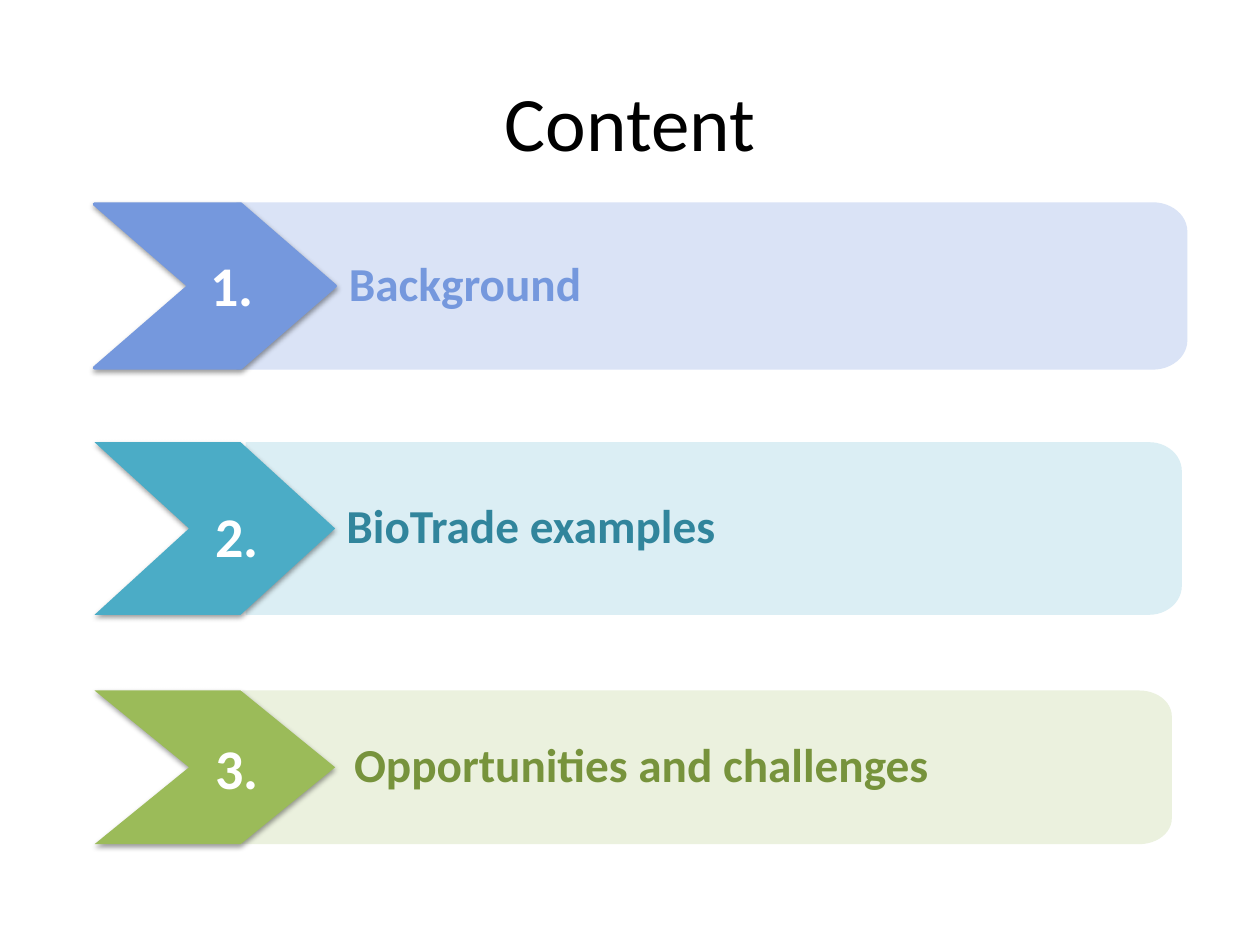
"""Build the Content slide: three numbered chevron banners."""
from dataclasses import dataclass
from math import cos, pi, sin
from typing import Any

from lxml.etree import SubElement
from pptx import Presentation
from pptx.dml.color import RGBColor as Rgb
from pptx.enum.shapes import MSO_SHAPE as Preset
from pptx.enum.text import MSO_ANCHOR as Anchor, PP_ALIGN as Align
from pptx.oxml.ns import qn
from pptx.util import Inches, Pt


@dataclass(frozen=True)
class Theme:
    """Colours, font and type sizes of the slide."""
    font: str = "Calibri"
    title: str = "000000"
    number: str = "FFFFFF"
    shadow: str = "000000"
    title_size: int = 44
    topic_size: int = 27
    number_size: int = 32


@dataclass(frozen=True)
class Banner:
    """One agenda entry; lengths are in inches."""
    number: str
    topic: str
    top: float
    height: float
    left: float
    right: float
    indent: float
    number_at: tuple[float, float, float]
    strong: str
    pale: str
    ink: str
    outlined: bool = False


THEME = Theme()
CHEVRON_LEFT, CHEVRON_WIDTH, CHEVRON_POINT = 0.75, 1.91, 0.75
CORNER_WIDTH, CORNER_SHARE, CORNER_STEPS = 0.26, 0.167, 12
BANNERS = (
    Banner("1.", "Background", 1.62, 1.3, 1.88, 9.41, 0.68,
           (1.57, 1.94, 0.64), "7598DD", "DAE3F6", "7598DD", True),
    Banner("2.", "BioTrade examples", 3.51, 1.37, 1.95, 9.38, 0.59,
           (1.61, 3.93, 0.71), "4BACC6", "DBEEF4", "31859C"),
    Banner("3.", "Opportunities and challenges", 5.48, 1.22, 1.92, 9.3, 0.68,
           (1.61, 5.77, 0.63), "9BBB59", "EBF1DE", "77933C"),
)


def apply(target: Any, **values: Any) -> None:
    """Set each named attribute on the target."""
    for name, value in values.items():
        setattr(target, name, value)


def write(frame: Any, wording: str, size: int, colour: str, bold: bool,
          align: Any = Align.LEFT) -> Any:
    """Put one formatted paragraph in a text frame and return it."""
    frame.word_wrap = True
    paragraph = frame.paragraphs[0]
    paragraph.alignment = align
    run = paragraph.add_run()
    run.text = wording
    apply(run.font, name=THEME.font, size=Pt(size), bold=bold)
    run.font.color.rgb = Rgb.from_string(colour)
    return paragraph


def paint(shape: Any, colour: str, outlined: bool) -> None:
    """Give a shape a plain fill, with an outline to match if wanted."""
    shape.shadow.inherit = False
    shape.fill.solid()
    shape.fill.fore_color.rgb = Rgb.from_string(colour)
    if outlined:
        shape.line.color.rgb = Rgb.from_string(colour)
        shape.line.width = Pt(2)
    else:
        shape.line.fill.background()


def cast_shadow(shape: Any) -> None:
    """Add a soft shadow below a shape."""
    effects = shape._element.spPr.find(qn("a:effectLst"))
    shadow = SubElement(effects, qn("a:outerShdw"), blurRad=str(Pt(3.1)),
                        dist=str(Pt(1.6)), dir="5400000", rotWithShape="0")
    colour = SubElement(shadow, qn("a:srgbClr"), val=THEME.shadow)
    SubElement(colour, qn("a:alpha"), val="38000")


def draw_panel(shapes: Any, banner: Banner) -> None:
    """Draw the pale panel, rounded at the right, with its topic."""
    bottom = banner.top + banner.height
    corner_height = banner.height * CORNER_SHARE
    angles = [step * pi / 2 / CORNER_STEPS for step in range(CORNER_STEPS + 1)]
    arc = [(banner.right - CORNER_WIDTH * (1 - sin(angle)),
            corner_height * (1 - cos(angle))) for angle in angles]
    outline = [(x, banner.top + drop) for x, drop in arc]
    outline += [(x, bottom - drop) for x, drop in reversed(arc)]
    outline.append((banner.left, bottom))
    builder = shapes.build_freeform(Inches(banner.left), Inches(banner.top))
    builder.add_line_segments([(Inches(x), Inches(y)) for x, y in outline])
    panel = builder.convert_to_shape()
    paint(panel, banner.pale, banner.outlined)
    frame = panel.text_frame
    apply(frame, vertical_anchor=Anchor.MIDDLE, margin_left=Inches(0.21),
          margin_right=Inches(0.09), margin_top=Inches(0.09),
          margin_bottom=Inches(0.09))
    topic = write(frame, banner.topic, THEME.topic_size, banner.ink, True)
    apply(topic, level=1, line_spacing=0.9)
    properties = topic._p.get_or_add_pPr()
    properties.set("marL", str(Inches(banner.indent)))
    properties.set("indent", "0")


def draw_chevron(shapes: Any, banner: Banner) -> None:
    """Draw the strong chevron and the number over it."""
    chevron = shapes.add_shape(
        Preset.CHEVRON, Inches(CHEVRON_LEFT), Inches(banner.top),
        Inches(CHEVRON_WIDTH), Inches(banner.height))
    chevron.adjustments[0] = CHEVRON_POINT / banner.height
    paint(chevron, banner.strong, banner.outlined)
    cast_shadow(chevron)
    left, top, width = banner.number_at
    number = shapes.add_textbox(Inches(left), Inches(top), Inches(width),
                                Inches(0.64))
    write(number.text_frame, banner.number, THEME.number_size, THEME.number,
          True)


def main() -> None:
    """Build and save the slide."""
    deck = Presentation()
    apply(deck, slide_width=Inches(10), slide_height=Inches(7.5))
    slide = deck.slides.add_slide(deck.slide_layouts[5])
    title = slide.shapes.title
    apply(title, left=Inches(0.5), top=Inches(0.36), width=Inches(9),
          height=Inches(1.19))
    title.text_frame.vertical_anchor = Anchor.MIDDLE
    write(title.text_frame, "Content", THEME.title_size, THEME.title, False,
          Align.CENTER)
    for banner in BANNERS:
        draw_panel(slide.shapes, banner)
        draw_chevron(slide.shapes, banner)
    deck.save("out.pptx")


if __name__ == "__main__":
    main()
